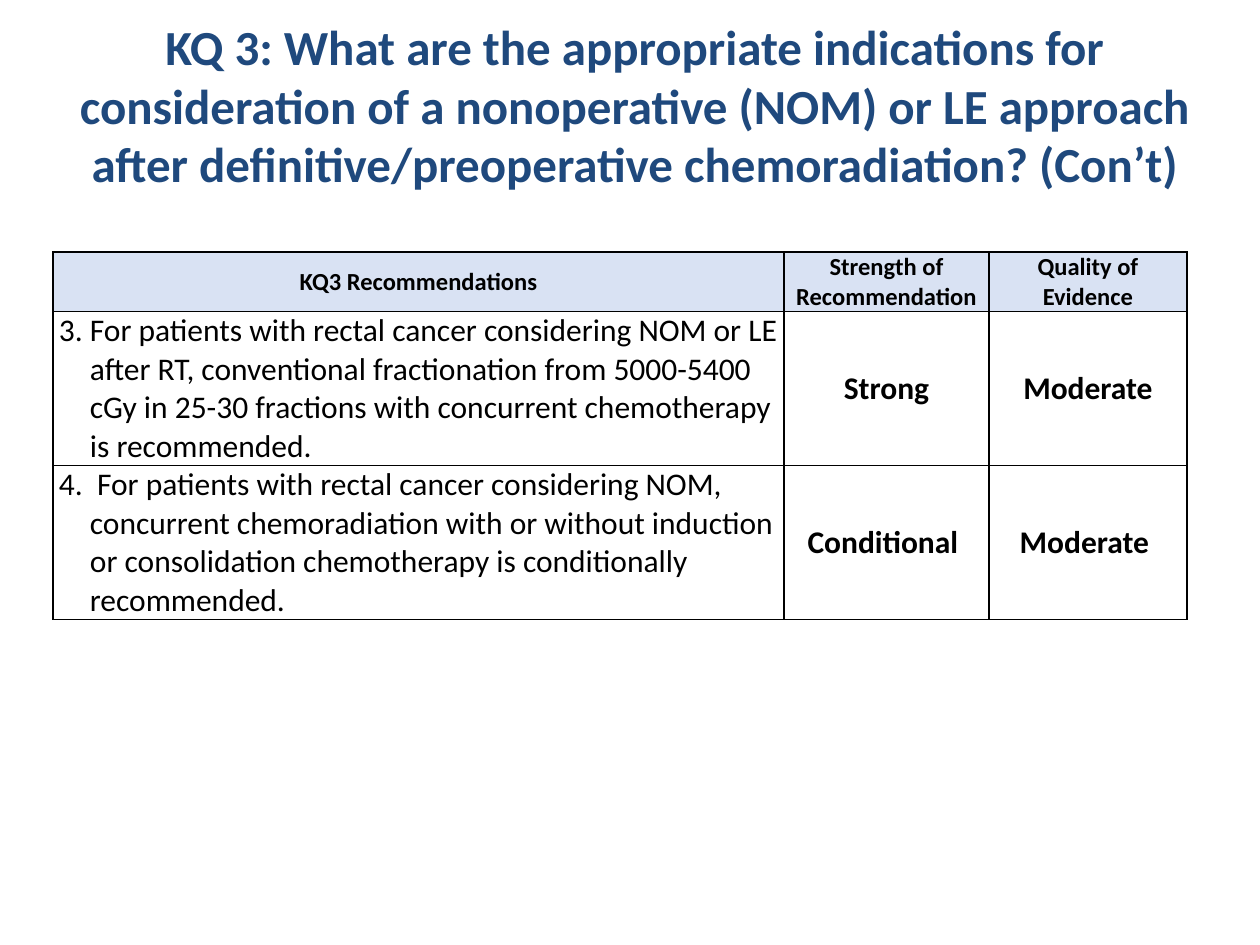
from pptx import Presentation
from pptx.dml.color import RGBColor as RGB
from pptx.enum.text import MSO_ANCHOR as Anchor, MSO_AUTO_SIZE as Fit, PP_ALIGN as Align
from pptx.oxml import parse_xml
from pptx.oxml.ns import nsdecls
from pptx.util import Pt

THEME = {
    "font": "Calibri",
    "title": (28, "1F497D"),
    "head": (14, "000000"),
    "body": (18, "000000"),
    "band": "D9E2F3",
    "rule": "000000",
}
TITLE = ("KQ 3: What are the appropriate indications for consideration of a "
         "nonoperative (NOM) or LE approach after definitive/preoperative "
         "chemoradiation? (Con’t)")
ROWS = [
    ("KQ3 Recommendations", "Strength of Recommendation", "Quality of Evidence"),
    ("For patients with rectal cancer considering NOM or LE after RT, conventional "
     "fractionation from 5000-5400 cGy in 25-30 fractions with concurrent "
     "chemotherapy is recommended.", "Strong", "Moderate"),
    ("4.  For patients with rectal cancer considering NOM, concurrent chemoradiation "
     "with or without induction or consolidation chemotherapy is conditionally "
     "recommended.", "Conditional ", "Moderate "),
]
WIDTHS = (731, 205, 198)
HEIGHTS = (59, 154, 154)
INDENT = 31


def px(n):
    return round(n * 914400 / 126)


def assign(item, values):
    for name, value in values.items():
        setattr(item, name, value)


def write(frame, text, style, bold=True, align=Align.CENTER):
    para = frame.paragraphs[0]
    para.alignment = align
    run = para.add_run()
    run.text = text
    size, color = THEME[style]
    assign(run.font, {"name": THEME["font"], "size": Pt(size), "bold": bold})
    run.font.color.rgb = RGB.from_string(color)
    return para


def border(cell):
    props = cell._tc.get_or_add_tcPr()
    for side in "LRTB":
        props.append(parse_xml(
            f'<a:ln{side} {nsdecls("a")} w="{Pt(1)}"><a:solidFill>'
            f'<a:srgbClr val="{THEME["rule"]}"/></a:solidFill></a:ln{side}>'))


def hang(para, start=None):
    props = para._p.get_or_add_pPr()
    props.set("marL", str(px(INDENT)))
    props.set("indent", str(-px(INDENT)))
    if start:
        props.append(parse_xml(
            f'<a:buClr {nsdecls("a")}><a:srgbClr val="{THEME["body"][1]}"/></a:buClr>'))
        props.append(parse_xml(
            f'<a:buAutoNum {nsdecls("a")} type="arabicPeriod" startAt="{start}"/>'))


def fill_cell(cell, text, row, col):
    head, claim = row == 0, row > 0 and col == 0
    assign(cell, {
        "margin_left": px(6), "margin_right": px(6),
        "margin_top": 0, "margin_bottom": 0,
        "vertical_anchor": Anchor.TOP if claim else Anchor.MIDDLE,
    })
    border(cell)
    if head:
        cell.fill.solid()
        cell.fill.fore_color.rgb = RGB.from_string(THEME["band"])
    else:
        cell.fill.background()
    para = write(cell.text_frame, text, "head" if head else "body",
                 not claim, Align.LEFT if claim else Align.CENTER)
    if claim:
        hang(para, 3 if row == 1 else None)


def add_title(slide):
    title = slide.shapes.title
    assign(title, {"left": px(31), "top": px(10), "width": px(1207), "height": px(158)})
    assign(title.text_frame, {"word_wrap": True, "auto_size": Fit.NONE,
                              "vertical_anchor": Anchor.TOP})
    write(title.text_frame, TITLE, "title")


def add_grid(slide):
    table = slide.shapes.add_table(
        len(ROWS), len(WIDTHS), px(53), px(252),
        px(sum(WIDTHS)), px(sum(HEIGHTS))).table
    assign(table, {"first_row": False, "horz_banding": False})
    for column, width in zip(table.columns, WIDTHS):
        column.width = px(width)
    for r, (texts, height) in enumerate(zip(ROWS, HEIGHTS)):
        table.rows[r].height = px(height)
        for c, text in enumerate(texts):
            fill_cell(table.cell(r, c), text, r, c)


def main():
    deck = Presentation()
    assign(deck, {"slide_width": px(1260), "slide_height": px(945)})
    slide = deck.slides.add_slide(deck.slide_layouts[5])
    add_title(slide)
    add_grid(slide)
    deck.save("out.pptx")


if __name__ == "__main__":
    main()
